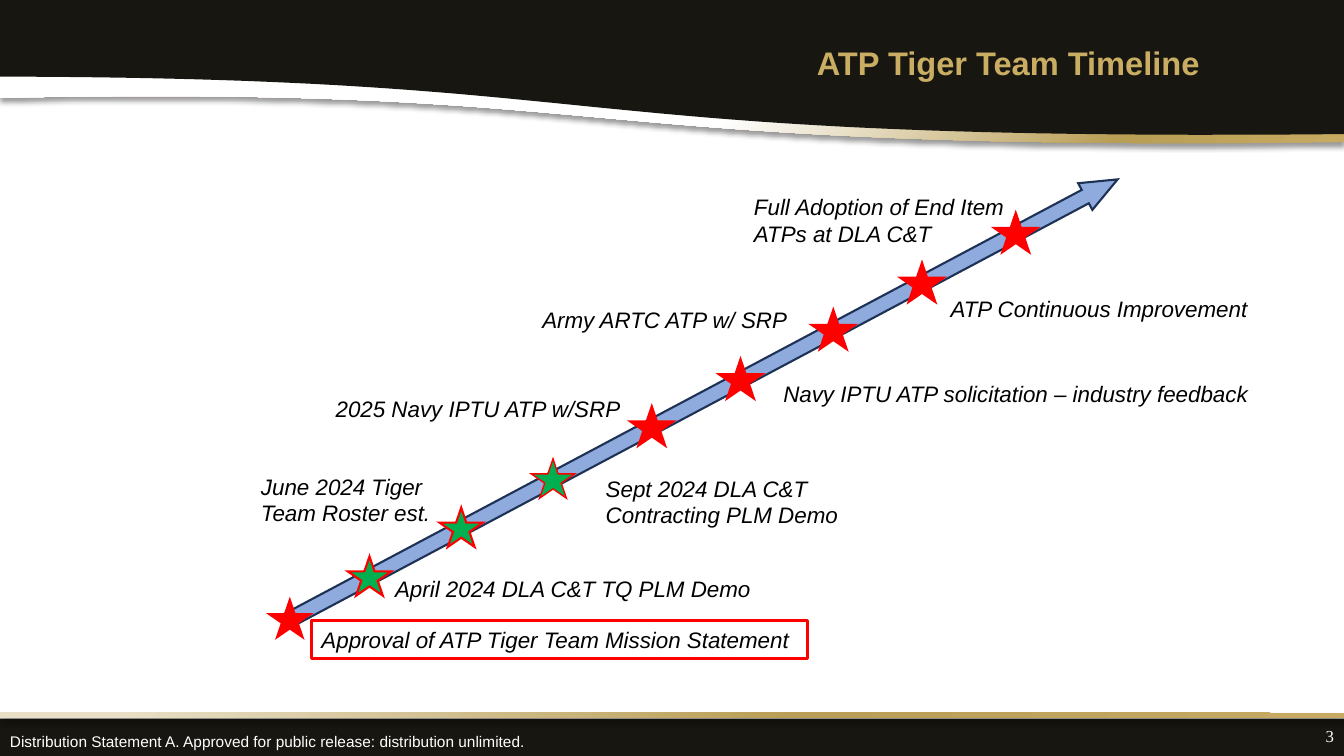
from math import radians, tan

from lxml import etree
from pptx import Presentation
from pptx.dml.color import RGBColor
from pptx.enum.shapes import MSO_SHAPE as Shape
from pptx.enum.text import MSO_ANCHOR as Anchor, PP_ALIGN as Align
from pptx.oxml import parse_xml
from pptx.oxml.ns import nsdecls, qn
from pptx.util import Inches, Pt

BLACK = RGBColor(0x00, 0x00, 0x00)
WHITE = RGBColor(0xFF, 0xFF, 0xFF)
INK = RGBColor(0x17, 0x16, 0x10)
GOLD = RGBColor(0xB9, 0x9E, 0x55)
LIGHT_GOLD = RGBColor(0xC7, 0xAA, 0x61)
PALE_GOLD = RGBColor(0xE8, 0xDF, 0xC6)
TITLE_GOLD = RGBColor(0xC9, 0xAD, 0x62)
ARROW_BLUE = RGBColor(0x8F, 0xAA, 0xDC)
NAVY = RGBColor(0x1E, 0x32, 0x56)
RED = RGBColor(0xFF, 0x00, 0x00)
GREEN = RGBColor(0x00, 0xB0, 0x50)

SLIDE_W, SLIDE_H = 13.33, 7.5
STAR_W, STAR_H = 0.43, 0.39
SLOPE = tan(radians(28))

# star left, star fill, star line width, label, label box (left, top, width, height)
MILESTONES = [
    (2.66, RED, 1, "Approval of ATP Tiger Team Mission Statement", (3.09, 6.16, 4.92, 0.37)),
    (3.45, GREEN, 1.5, "April 2024 DLA C&T TQ PLM Demo", (3.82, 5.66, 4.92, 0.37)),
    (4.36, GREEN, 1.5, "June 2024 Tiger Team Roster est.", (2.49, 4.64, 2.17, 0.64)),
    (5.27, GREEN, 1, "Sept 2024 DLA C&T Contracting PLM Demo", (5.91, 4.66, 3.34, 0.64)),
    (6.25, RED, 1.5, "2025 Navy IPTU ATP w/SRP", (3.23, 3.87, 3.55, 0.37)),
    (7.13, RED, 1.5, "Navy IPTU ATP solicitation – industry feedback", (7.67, 3.72, 4.88, 0.37)),
    (8.05, RED, 1.5, "Army ARTC ATP w/ SRP", (5.28, 2.99, 3.55, 0.37)),
    (8.93, RED, 1.5, "ATP Continuous Improvement", (9.33, 2.88, 3.17, 0.37)),
    (9.86, RED, 1.5, "Full Adoption of End Item ATPs at DLA C&T", (7.38, 1.87, 3.04, 0.64)),
]


def inches(box):
    return [Inches(length) for length in box]


def paint(shape, fill=None, line=None, width=1):
    shape.shadow.inherit = False
    if fill is None:
        shape.fill.background()
    else:
        shape.fill.solid()
        shape.fill.fore_color.rgb = fill
    if line is None:
        shape.line.fill.background()
    else:
        shape.line.color.rgb = line
        shape.line.width = Pt(width)


def sharpen(shape):
    """Give the outline mitred corners."""
    outline = shape.line._get_or_add_ln()
    etree.SubElement(outline, qn("a:miter"), lim="800000")


def gild(shape, stops):
    """Radial gradient from the top left corner, with a soft shadow below."""
    paint(shape)
    marks = "".join(
        f'<a:gs pos="{pos * 1000}"><a:srgbClr val="{color}"/></a:gs>' for pos, color in stops)
    gradient = parse_xml(
        f'<a:gradFill {nsdecls("a")} rotWithShape="1"><a:gsLst>{marks}</a:gsLst>'
        '<a:path path="circle"><a:fillToRect r="100000" b="100000"/></a:path></a:gradFill>')
    properties = shape._element.spPr
    properties.replace(properties.find(qn("a:noFill")), gradient)
    properties.find(qn("a:effectLst")).append(parse_xml(
        f'<a:outerShdw {nsdecls("a")} blurRad="{Pt(4)}" dist="{Pt(3)}" dir="5400000" '
        'algn="t" rotWithShape="0"><a:srgbClr val="000000"><a:alpha val="40000"/>'
        '</a:srgbClr></a:outerShdw>'))


def write(frame, text, size, color, font="Arial", align=Align.LEFT,
          anchor=Anchor.TOP, wrap=True, bold=False, italic=False):
    frame.word_wrap = wrap
    frame.vertical_anchor = anchor
    paragraph = frame.paragraphs[0]
    paragraph.alignment = align
    run = paragraph.add_run()
    run.text = text
    run.font.name, run.font.size = font, Pt(size)
    run.font.bold, run.font.italic = bold, italic
    run.font.color.rgb = color


def add_wave(slide, top, start, controls, end, steps=60):
    """Band hanging from top, its lower edge a cubic curve from start to end."""
    knots = [start, *controls, end]
    curve = []
    for step in range(steps + 1):
        t = step / steps
        weights = ((1 - t) ** 3, 3 * t * (1 - t) ** 2, 3 * t * t * (1 - t), t ** 3)
        curve.append([Inches(sum(w * knot[axis] for w, knot in zip(weights, knots)))
                      for axis in (0, 1)])
    builder = slide.shapes.build_freeform(Inches(end[0]), Inches(top))
    builder.add_line_segments([(Inches(start[0]), Inches(top)), *curve], close=True)
    return builder.convert_to_shape()


def add_header(slide, box):
    left, top, width, _ = box
    right = left + width
    # Gilded wave behind the dark one
    gilded = add_wave(slide, top + 0.52, (left, top + 0.97),
                      [(left + 6.46, top + 0.84), (left + 5.34, top + 1.51)],
                      (right, top + 1.41))
    gild(gilded, [(55, WHITE), (84, GOLD), (100, LIGHT_GOLD)])
    dark = add_wave(slide, top - 0.01, (left - 0.01, top + 0.76),
                    [(left + 6.42, top + 0.77), (left + 5.32, top + 1.41)],
                    (right, top + 1.33))
    paint(dark, INK)
    # Title, brought in front of the waves
    title = slide.shapes.title
    title.left, title.top, title.width, title.height = inches((left + 7.25, top + 0.38, 5.5, 0.77))
    write(title.text_frame, "ATP Tiger Team Timeline", 23.3, TITLE_GOLD,
          align=Align.CENTER, bold=True)
    slide.shapes._spTree.append(title._element)


def add_footer(slide, box):
    left, top, width, _ = box
    bar = slide.shapes.add_shape(Shape.RECTANGLE, *inches((left - 0.01, top + 0.06, width + 0.03, 0.39)))
    paint(bar, INK)
    rule = slide.shapes.add_shape(Shape.RECTANGLE, *inches((left, top, width, 0.05)))
    gild(rule, [(9, PALE_GOLD), (59, GOLD), (100, LIGHT_GOLD)])
    number = slide.shapes.add_textbox(*inches((left + width - 0.67, top + 0.03, 0.67, 0.4)))
    write(number.text_frame, "3", 12, WHITE, "Times New Roman", Align.RIGHT, Anchor.MIDDLE)
    statement = slide.shapes.add_textbox(*inches((left, top + 0.14, 5.32, 0.29)))
    write(statement.text_frame,
          "Distribution Statement A. Approved for public release: distribution unlimited.",
          11, WHITE, wrap=False)


def add_timeline(slide, box):
    left, top, width, height = box
    # Rising arrow through the middle of the box
    arrow = slide.shapes.add_shape(
        Shape.LEFT_ARROW, *inches((left, top + height / 2 - 0.15, width, 0.3)))
    arrow.adjustments[0], arrow.adjustments[1] = 0.5, 1.211
    arrow.rotation = 152
    paint(arrow, ARROW_BLUE, NAVY, 1.5)
    sharpen(arrow)
    # Stars along the arrow, each with its label
    first_left = MILESTONES[0][0]
    for star_left, fill, line_width, text, label_box in MILESTONES:
        star_top = top + height - 0.25 - (star_left - first_left) * SLOPE
        star = slide.shapes.add_shape(
            Shape.STAR_5_POINT, *inches((star_left, star_top, STAR_W, STAR_H)))
        paint(star, fill, RED, line_width)
        sharpen(star)
        label = slide.shapes.add_textbox(*inches(label_box))
        write(label.text_frame, text, 16, BLACK, italic=True)
        if star_left == first_left:
            label.line.color.rgb = RED
            label.line.width = Pt(2.25)


def main():
    deck = Presentation()
    deck.slide_width, deck.slide_height = Inches(SLIDE_W), Inches(SLIDE_H)
    slide = deck.slides.add_slide(deck.slide_layouts[5])
    add_header(slide, (0, 0, SLIDE_W, 1.42))
    add_timeline(slide, (2.3, 1.75, 9.33, 4.44))
    add_footer(slide, (0, 7.07, SLIDE_W, 0.43))
    deck.save("out.pptx")


if __name__ == "__main__":
    main()
